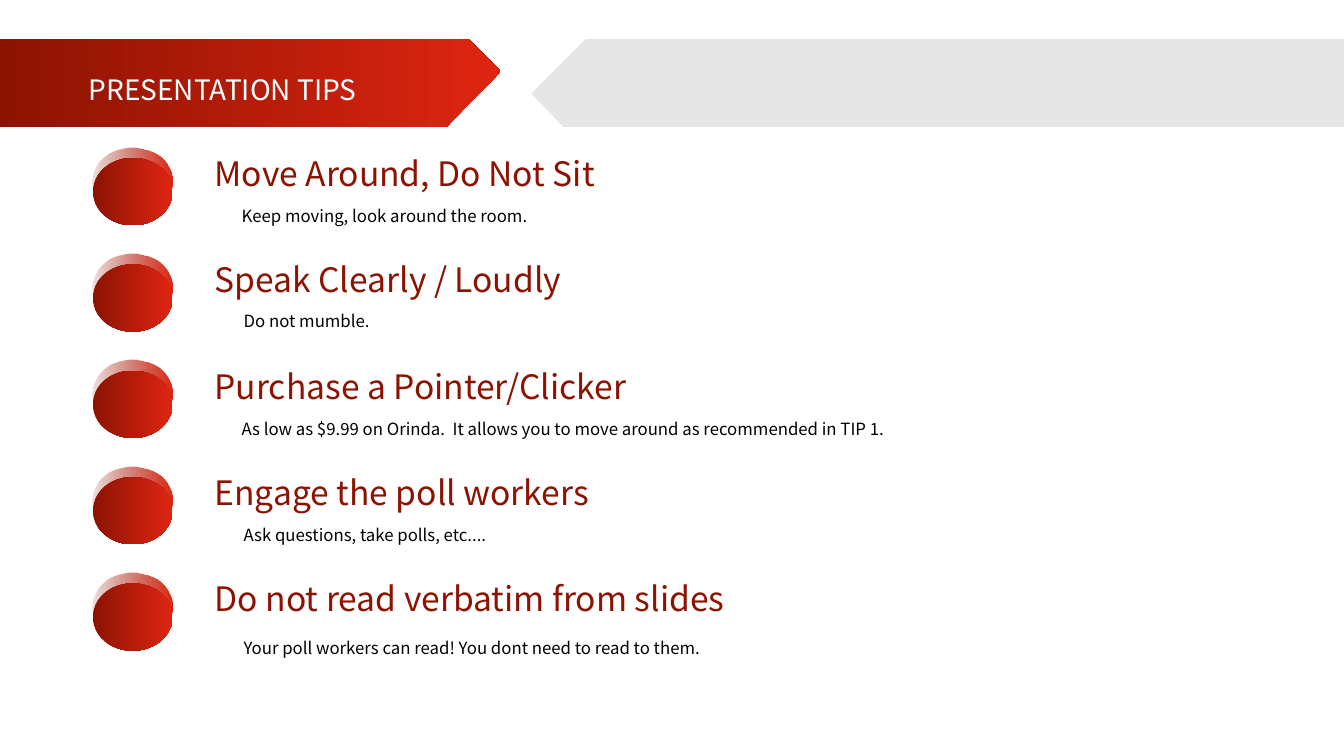
from lxml.etree import SubElement
from pptx import Presentation
from pptx.dml.color import RGBColor
from pptx.enum.shapes import MSO_SHAPE
from pptx.enum.text import MSO_ANCHOR, MSO_AUTO_SIZE, PP_ALIGN
from pptx.oxml.ns import qn
from pptx.util import Cm, Pt

FONT = "Noto Sans CJK SC"
RED = ("8C1302", "DE2511")
GREY, WHITE, BLACK = "E7E6E6", "FFFFFF", "000000"
TITLE = "PRESENTATION TIPS"
TIPS = [
    ("Move Around, Do Not Sit", "Keep moving, look around the room.", 5.84, 1.1),
    ("Speak Clearly / Loudly", "Do not mumble.", 5.89, 1.06),
    ("Purchase a Pointer/Clicker",
     "As low as $9.99 on Orinda.  It allows you to move around as recommended in TIP 1.", 5.84, 1.1),
    ("Engage the poll workers", "Ask questions, take polls, etc....", 5.89, 1.11),
    ("Do not read verbatim from slides",
     "Your poll workers can read! You dont need to read to them.", 5.89, 1.27),
]
BANNERS = [
    (RED, [(0, 0.99), (11.81, 0.99), (12.62, 1.8), (11.25, 3.2), (0, 3.2)]),
    (GREY, [(14.76, 0.99), (33.87, 0.99), (33.87, 3.2), (14.2, 3.2), (13.39, 2.36)]),
]
HEADING_LEFT, HEADING_TOP, PITCH = 5.16, 3.73, 2.68
BALL_LEFT, BALL_TOP, BALL_W, BALL_H, BALL_DROP = 2.34, 3.71, 2.01, 1.7, 0.27

FRAME = {"word_wrap": True, "auto_size": MSO_AUTO_SIZE.NONE, "vertical_anchor": MSO_ANCHOR.TOP}
TITLE_STYLE = {"size": Pt(20), "name": FONT}
HEADING_STYLE = {"size": Pt(24), "name": FONT}
NOTE_STYLE = {"size": Pt(12), "name": FONT}


def rgb(value):
    return RGBColor.from_string(value)


def apply(target, values):
    for key, value in values.items():
        setattr(target, key, value)


def paint(fill, colour):
    if isinstance(colour, str):
        fill.solid()
        fill.fore_color.rgb = rgb(colour)
        return
    fill.gradient()
    fill.gradient_angle = 0
    for stop, value in zip(fill.gradient_stops, colour):
        stop.color.rgb = rgb(value)


def finish(shape, colour):
    shape.shadow.inherit = False
    shape.line.fill.background()
    paint(shape.fill, colour)


def write(box, text, style, colour, spacing):
    apply(box.text_frame, FRAME)
    paragraph = box.text_frame.paragraphs[0]
    apply(paragraph, {"alignment": PP_ALIGN.LEFT, "line_spacing": spacing})
    run = paragraph.add_run()
    run.text = text
    apply(run.font, style)
    paint(run.font.fill, colour)


def add_banner(shapes, colour, corners):
    points = [(Cm(x), Cm(y)) for x, y in corners]
    outline = shapes.build_freeform(*points[0])
    outline.add_line_segments(points[1:], close=True)
    finish(outline.convert_to_shape(), colour)


def add_ball(shapes, top):
    for drop in (0, BALL_DROP):
        ball = shapes.add_shape(MSO_SHAPE.OVAL, Cm(BALL_LEFT), Cm(top + drop), Cm(BALL_W), Cm(BALL_H))
        finish(ball, RED)
        if drop == 0:
            first_stop = ball._element.spPr.find(".//" + qn("a:srgbClr"))
            SubElement(first_stop, qn("a:alpha"), val="13000")


def main():
    prs = Presentation()
    prs.slide_width, prs.slide_height = Cm(33.87), Cm(19.05)
    slide = prs.slides.add_slide(prs.slide_layouts[5])
    shapes = slide.shapes

    for colour, corners in BANNERS:
        add_banner(shapes, colour, corners)

    title = shapes.title
    apply(title, {"left": Cm(1.98), "top": Cm(1.45), "width": Cm(10.64), "height": Cm(1.37)})
    write(title, TITLE, TITLE_STYLE, WHITE, 1.3)
    shapes._spTree.append(title._element)

    for row, (heading, note, note_left, note_drop) in enumerate(TIPS):
        top = HEADING_TOP + row * PITCH
        heading_box = shapes.add_textbox(Cm(HEADING_LEFT), Cm(top), Cm(22.07), Cm(1.27))
        write(heading_box, heading, HEADING_STYLE, RED, 1.0)
        note_box = shapes.add_textbox(Cm(note_left), Cm(top + note_drop), Cm(22.28), Cm(0.99))
        write(note_box, note, NOTE_STYLE, BLACK, 1.45)
        add_ball(shapes, BALL_TOP + row * PITCH)

    prs.save("out.pptx")


if __name__ == "__main__":
    main()
